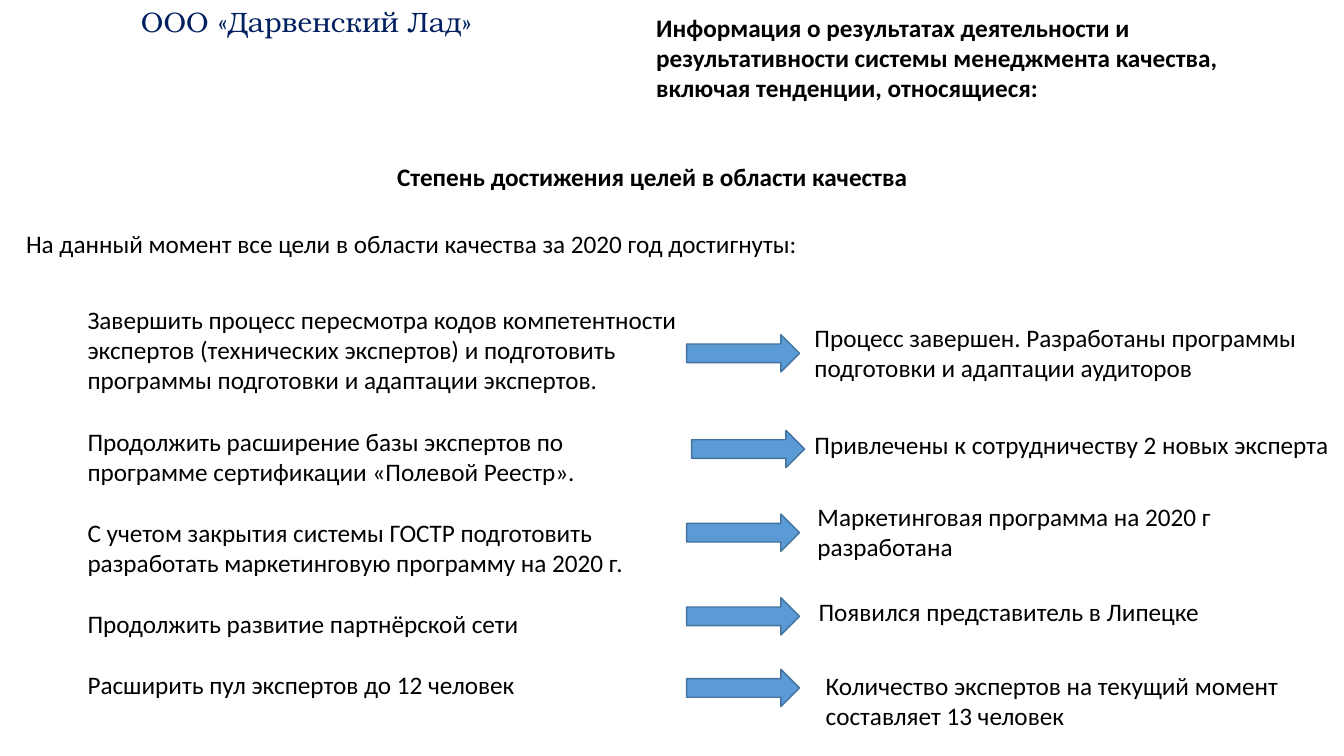
"""Build the slide on the achievement of quality goals."""
from pptx import Presentation
from pptx.dml.color import RGBColor
from pptx.enum.shapes import MSO_SHAPE
from pptx.enum.text import MSO_AUTO_SIZE
from pptx.util import Inches, Pt

COLORS = {"company": "002060", "text": "000000", "arrow": "5B9BD5", "arrow_line": "43739E"}
BODY_FONT = "Calibri"
COMPANY_FONT = "TeX Gyre Bonum"

COMPANY = "ООО «Дарвенский Лад»"
TOPIC = ("Информация о результатах деятельности и результативности "
         "системы менеджмента качества, включая тенденции, относящиеся:")
HEADING = "Степень достижения целей в области качества"
INTRO = "На данный момент все цели в области качества за 2020 год достигнуты:"
GOALS = [
    "Завершить процесс пересмотра кодов компетентности экспертов (технических экспертов) "
    "и подготовить программы подготовки и адаптации экспертов.",
    "Продолжить расширение базы экспертов по программе сертификации «Полевой Реестр».",
    "С учетом закрытия системы ГОСТР подготовить разработать маркетинговую программу на 2020 г.",
    "Продолжить развитие партнёрской сети",
    "Расширить пул экспертов до 12 человек",
]
RESULTS = [
    (["Процесс завершен. Разработаны программы", "подготовки и адаптации аудиторов"],
     (7.98, 3.15, 5.1, 0.71), False),
    (["Привлечены к сотрудничеству 2 новых эксперта"], (7.98, 4.21, 5.36, 0.4), False),
    (["Маркетинговая программа на 2020 г разработана"], (8.01, 4.92, 5.36, 0.71), True),
    (["Появился представитель в Липецке"], (8.02, 5.87, 5.05, 0.4), True),
    (["Количество экспертов на текущий момент составляет 13 человек"],
     (8.09, 6.6, 5.05, 0.71), True),
]
ARROW_CORNERS = [(6.81, 3.32), (6.86, 4.27), (6.81, 5.1), (6.81, 5.93), (6.81, 6.64)]
ARROW_SIZE = (1.12, 0.37)


def add_text(slide, lines, place, wrap=True, bold=False, size=18,
             font=BODY_FONT, color="text", gap=0):
    frame = slide.shapes.add_textbox(*map(Inches, place)).text_frame
    frame.text = "\n".join(lines)
    frame.word_wrap = wrap
    frame.auto_size = MSO_AUTO_SIZE.SHAPE_TO_FIT_TEXT
    for index, paragraph in enumerate(frame.paragraphs):
        if index and gap:
            paragraph.space_before = Pt(gap)
        for run in paragraph.runs:
            run.font.name = font
            run.font.size = Pt(size)
            run.font.bold = bold
            run.font.color.rgb = RGBColor.from_string(COLORS[color])


def add_arrow(slide, corner):
    arrow = slide.shapes.add_shape(MSO_SHAPE.RIGHT_ARROW, *map(Inches, corner + ARROW_SIZE))
    arrow.shadow.inherit = False
    arrow.fill.solid()
    arrow.fill.fore_color.rgb = RGBColor.from_string(COLORS["arrow"])
    arrow.line.color.rgb = RGBColor.from_string(COLORS["arrow_line"])
    arrow.line.width = Pt(1)


def main():
    deck = Presentation()
    deck.slide_width, deck.slide_height = Inches(13.33), Inches(7.5)
    slide = deck.slides.add_slide(deck.slide_layouts[6])
    add_text(slide, [COMPANY], (1.3, 0, 3.59, 0.44), wrap=False, size=20,
             font=COMPANY_FONT, color="company")
    add_text(slide, [HEADING], (3.84, 1.55, 5.27, 0.4), wrap=False, bold=True)
    add_text(slide, [TOPIC], (6.41, 0.07, 6.67, 1.01), bold=True)
    add_text(slide, [INTRO], (0.16, 2.22, 7.92, 0.4), wrap=False)
    add_text(slide, GOALS, (0.77, 2.97, 6.14, 4.04), gap=22)
    for corner, (lines, place, wrap) in zip(ARROW_CORNERS, RESULTS):
        add_arrow(slide, corner)
        add_text(slide, lines, place, wrap)
    deck.save("out.pptx")


if __name__ == "__main__":
    main()
